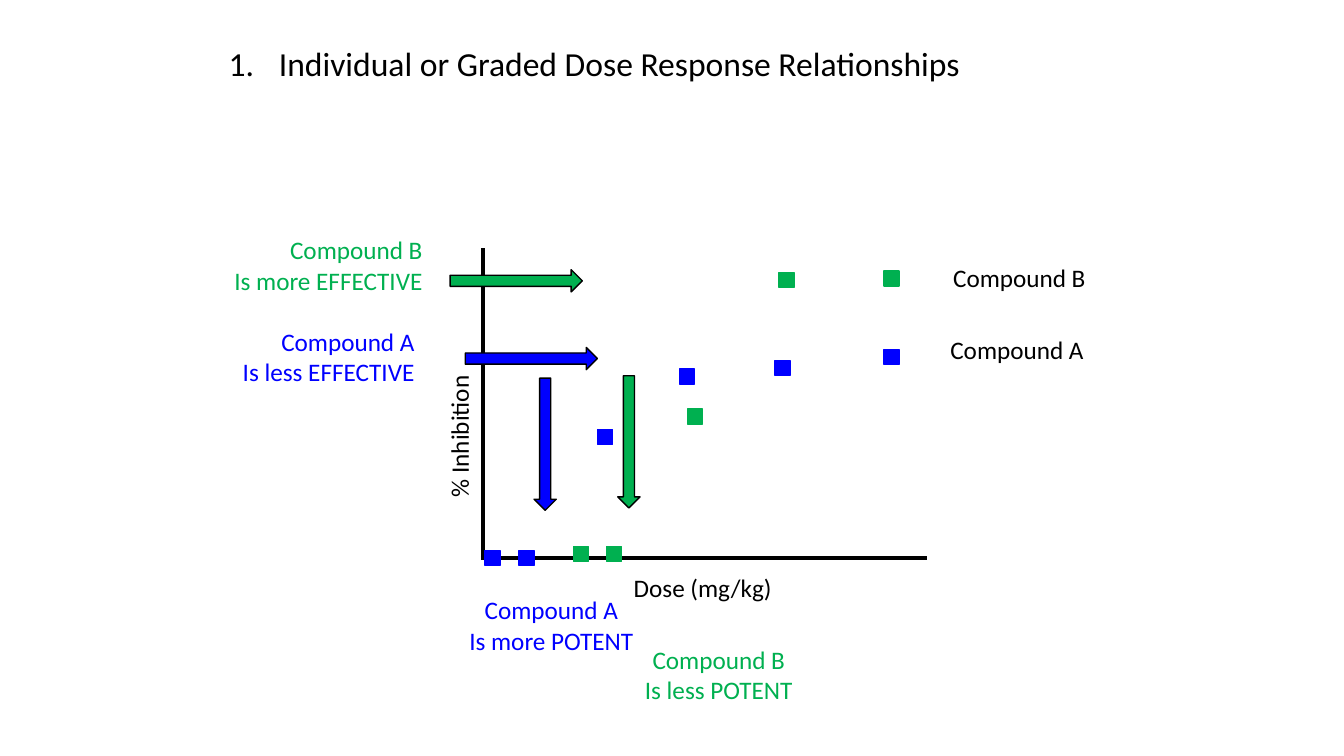
from dataclasses import dataclass

from lxml import etree
from pptx import Presentation
from pptx.dml.color import RGBColor
from pptx.enum.shapes import MSO_CONNECTOR, MSO_SHAPE
from pptx.enum.text import MSO_AUTO_SIZE, PP_ALIGN
from pptx.oxml.ns import qn
from pptx.slide import Slide
from pptx.text.text import TextFrame
from pptx.util import Cm, Pt

SQUARE, DOWN_ARROW = MSO_SHAPE.RECTANGLE, MSO_SHAPE.DOWN_ARROW
STRAIGHT = MSO_CONNECTOR.STRAIGHT
LEFT, CENTER, RIGHT = PP_ALIGN.LEFT, PP_ALIGN.CENTER, PP_ALIGN.RIGHT
GROW, FIXED = MSO_AUTO_SIZE.SHAPE_TO_FIT_TEXT, MSO_AUTO_SIZE.NONE

COLORS = {"black": "000000", "A": "0000FF", "B": "00B050"}
MARKER_SIZE = 0.38
ARROW_WIDTH, ARROW_LENGTH = 0.56, 3.33
LINE_HEIGHT, TWO_LINE_HEIGHT = 1.02, 1.8


# All positions and sizes below are in centimetres
@dataclass
class Axis:
    start: tuple[float, float]
    end: tuple[float, float]


@dataclass
class Block:
    left: float
    top: float
    width: float
    height: float
    color: str
    rotation: int = 0


@dataclass
class Label:
    lines: list[str]
    left: float
    top: float
    width: float
    height: float = LINE_HEIGHT
    color: str = "black"
    align: PP_ALIGN = LEFT
    rotation: int = 0
    size: int = 18
    wrap: bool = False
    auto_size: MSO_AUTO_SIZE = GROW


AXES = [
    Axis((12.17, 6.25), (12.17, 14.1)),
    Axis((12.12, 14.07), (23.37, 14.07)),
]

MARKERS = {
    "A": [(12.22, 13.87), (13.08, 13.87), (15.06, 10.82),
          (17.12, 9.3), (19.53, 9.09), (22.28, 8.81)],
    "B": [(14.45, 13.77), (15.29, 13.77), (17.32, 10.31),
          (19.63, 6.86), (22.28, 6.83)],
}

ARROWS = [
    Block(13.46, 9.53, ARROW_WIDTH, ARROW_LENGTH, "A"),
    Block(15.57, 9.47, ARROW_WIDTH, ARROW_LENGTH, "B"),
    Block(13.11, 7.37, ARROW_WIDTH, ARROW_LENGTH, "A", rotation=270),
    Block(12.73, 5.41, ARROW_WIDTH, ARROW_LENGTH, "B", rotation=270),
]

TITLE = Label(["Individual or Graded Dose Response Relationships"],
              4.24, 1.07, 22.86, 12.57, size=24, wrap=True, auto_size=FIXED)

LABELS = [
    Label(["Compound A"], 23.7, 8.31, 3.91),
    Label(["Compound B"], 23.77, 6.48, 3.89),
    Label(["% Inhibition"], 9.75, 10.46, 3.63, rotation=270),
    Label(["Dose (mg/kg)"], 15.72, 14.3, 4.04),
    Label(["Compound A", "Is more POTENT"],
          11.56, 14.86, 4.67, TWO_LINE_HEIGHT, "A", CENTER),
    Label(["Compound B", "Is less POTENT"],
          15.98, 16.1, 4.27, TWO_LINE_HEIGHT, "B", CENTER),
    Label(["Compound A", "Is less EFFECTIVE"],
          5.82, 8.1, 4.88, TWO_LINE_HEIGHT, "A", RIGHT),
    Label(["Compound B", "Is more EFFECTIVE"],
          5.59, 5.79, 5.31, TWO_LINE_HEIGHT, "B", RIGHT),
]


def rgb(name: str) -> RGBColor:
    return RGBColor.from_string(COLORS[name])


def set_attributes(target: object, values: dict[str, object]) -> None:
    for name, value in values.items():
        setattr(target, name, value)


def draw_axis(slide: Slide, axis: Axis) -> None:
    points = [Cm(value) for value in (*axis.start, *axis.end)]
    connector = slide.shapes.add_connector(STRAIGHT, *points)
    connector.line.color.rgb = rgb("black")
    connector.line.width = Pt(3)
    etree.SubElement(connector.element.spPr, qn("a:effectLst"))


def draw_block(slide: Slide, kind: MSO_SHAPE, block: Block,
               outline: str) -> None:
    shape = slide.shapes.add_shape(kind, Cm(block.left), Cm(block.top),
                                   Cm(block.width), Cm(block.height))
    shape.rotation = block.rotation
    shape.shadow.inherit = False
    shape.fill.solid()
    shape.fill.fore_color.rgb = rgb(block.color)
    shape.line.color.rgb = rgb(outline)
    shape.line.width = Pt(1)


def draw_label(slide: Slide, label: Label) -> TextFrame:
    box = slide.shapes.add_textbox(Cm(label.left), Cm(label.top),
                                   Cm(label.width), Cm(label.height))
    box.rotation = label.rotation
    frame = box.text_frame
    set_attributes(frame, {"text": "\n".join(label.lines),
                           "word_wrap": label.wrap,
                           "auto_size": label.auto_size})
    for paragraph in frame.paragraphs:
        paragraph.alignment = label.align
        font = paragraph.runs[0].font
        set_attributes(font, {"name": "Calibri", "size": Pt(label.size)})
        font.color.rgb = rgb(label.color)
    return frame


def draw_numbered_title(slide: Slide) -> None:
    paragraph = draw_label(slide, TITLE).paragraphs[0]
    set_attributes(paragraph, {"line_spacing": 0.9, "space_before": Pt(5)})
    properties = paragraph._p.get_or_add_pPr()
    properties.set("marL", str(Cm(2.54)))
    properties.set("indent", str(-Cm(1.27)))
    etree.SubElement(properties, qn("a:buFont"), typeface="+mj-lt")
    etree.SubElement(properties, qn("a:buAutoNum"), type="arabicPeriod")


def main() -> None:
    presentation = Presentation()
    set_attributes(presentation, {"slide_width": Cm(33.87),
                                  "slide_height": Cm(19.05)})
    slide = presentation.slides.add_slide(presentation.slide_layouts[6])

    # Graph axes and measured points
    for axis in AXES:
        draw_axis(slide, axis)
    for compound, positions in MARKERS.items():
        for left, top in positions:
            marker = Block(left, top, MARKER_SIZE, MARKER_SIZE, compound)
            draw_block(slide, SQUARE, marker, outline=compound)

    # Title, arrows and labels
    draw_numbered_title(slide)
    for arrow in ARROWS:
        draw_block(slide, DOWN_ARROW, arrow, outline="black")
    for label in LABELS:
        draw_label(slide, label)

    presentation.save("out.pptx")


if __name__ == "__main__":
    main()
